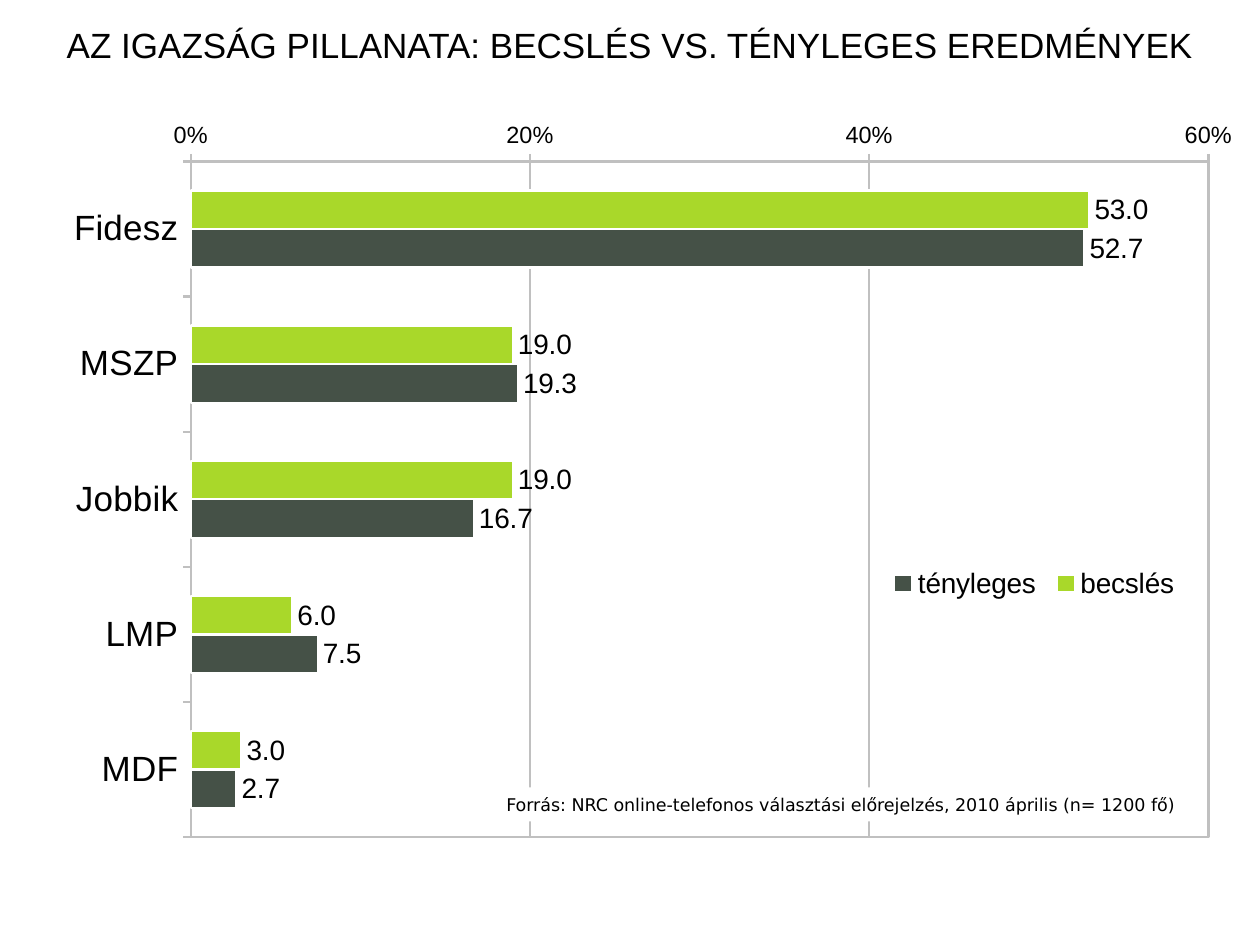
from dataclasses import dataclass

from lxml import etree
from pptx import Presentation
from pptx.chart.data import CategoryChartData
from pptx.dml.color import RGBColor
from pptx.enum.chart import XL_CHART_TYPE, XL_LABEL_POSITION, XL_LEGEND_POSITION, XL_TICK_MARK
from pptx.enum.text import MSO_ANCHOR, MSO_AUTO_SIZE, PP_ALIGN
from pptx.oxml import parse_xml
from pptx.oxml.ns import nsdecls, qn
from pptx.util import Inches, Pt

BAR_CLUSTERED = XL_CHART_TYPE.BAR_CLUSTERED
LABEL_OUTSIDE = XL_LABEL_POSITION.OUTSIDE_END
LEGEND_RIGHT = XL_LEGEND_POSITION.RIGHT
TICK_OUTSIDE = XL_TICK_MARK.OUTSIDE
TICK_NONE = XL_TICK_MARK.NONE
MIDDLE = MSO_ANCHOR.MIDDLE
CENTER = PP_ALIGN.CENTER
GROW_SHAPE = MSO_AUTO_SIZE.SHAPE_TO_FIT_TEXT


@dataclass(frozen=True)
class Theme:
    text: str = "000000"
    paper: str = "FFFFFF"
    grid: str = "C0C0C0"
    estimate: str = "A9D82A"
    actual: str = "455147"
    font: str = "Arial"
    source_font: str = "DejaVu Sans"
    title_size: float = 20
    category_size: float = 20
    label_size: float = 16
    scale_size: float = 13.4
    source_size: float = 10
    line_width: float = 1.34


THEME = Theme()
PARTIES = ["Fidesz", "MSZP", "Jobbik", "LMP", "MDF"]
RESULTS = [
    ("becslés", THEME.estimate, [53, 19, 19, 6, 3]),
    ("tényleges", THEME.actual, [52.7, 19.3, 16.7, 7.5, 2.7]),
]


def style_font(font, size, name=THEME.font):
    font.name = name
    font.size = Pt(size)
    font.bold = False
    font.color.rgb = RGBColor.from_string(THEME.text)


def style_line(line, color):
    line.width = Pt(THEME.line_width)
    line.color.rgb = RGBColor.from_string(color)


def place(shape, left, top, width, height):
    shape.left, shape.top = Inches(left), Inches(top)
    shape.width, shape.height = Inches(width), Inches(height)


def set_layout(parent, index, x, y, width, height, inner=False):
    """Give a plot area or legend a fixed place, in fractions of the chart."""
    for old in parent.findall(qn("c:layout")):
        parent.remove(old)
    layout = etree.Element(qn("c:layout"))
    manual = etree.SubElement(layout, qn("c:manualLayout"))
    values = [("xMode", "edge"), ("yMode", "edge"),
              ("x", x), ("y", y), ("w", width), ("h", height)]
    if inner:
        values.insert(0, ("layoutTarget", "inner"))
    for tag, value in values:
        etree.SubElement(manual, qn(f"c:{tag}")).set("val", str(value))
    parent.insert(index, layout)


def add_title(slide, text):
    title = slide.shapes.title
    place(title, -0.25, 0.05, 10.5, 0.61)
    title.text_frame.vertical_anchor = MIDDLE
    paragraph = title.text_frame.paragraphs[0]
    paragraph.alignment = CENTER
    run = paragraph.add_run()
    run.text = text
    style_font(run.font, THEME.title_size)


def style_axis(axis, size):
    axis.major_tick_mark = TICK_OUTSIDE
    axis.minor_tick_mark = TICK_NONE
    style_font(axis.tick_labels.font, size)
    style_line(axis.format.line, THEME.grid)


def style_series(series, color):
    series.format.fill.solid()
    series.format.fill.fore_color.rgb = RGBColor.from_string(color)
    style_line(series.format.line, THEME.paper)
    series.invert_if_negative = False
    labels = series.data_labels
    labels.show_value = True
    labels.number_format = "0.0"
    labels.number_format_is_linked = False
    labels.position = LABEL_OUTSIDE
    style_font(labels.font, THEME.label_size)


def add_legend(chart):
    chart.has_legend = True
    legend = chart.legend
    legend.position = LEGEND_RIGHT
    legend.include_in_layout = False
    style_font(legend.font, THEME.label_size)
    set_layout(chart._chartSpace.chart.find(qn("c:legend")), 1, 0.7, 0.61, 0.25, 0.06)


def add_results_chart(slide):
    data = CategoryChartData()
    data.categories = PARTIES
    for name, _, values in RESULTS:
        data.add_series(name, values)
    chart = slide.shapes.add_chart(
        BAR_CLUSTERED, Inches(0.25), Inches(0.83), Inches(9.65), Inches(5.94), data).chart
    chart.has_title = False
    style_font(chart.font, THEME.label_size)

    # Bars
    plot = chart.plots[0]
    plot.gap_width = 150
    plot.overlap = 0
    plot.vary_by_categories = False
    for series, (_, color, _) in zip(plot.series, RESULTS):
        style_series(series, color)

    # Axes: the first party on top, the scale along the upper edge
    style_axis(chart.category_axis, THEME.category_size)
    chart.category_axis.reverse_order = True
    scale = chart.value_axis
    style_axis(scale, THEME.scale_size)
    scale.minimum_scale, scale.maximum_scale, scale.major_unit = 0, 60, 20
    scale.tick_labels.number_format = "0\\%"
    scale.tick_labels.number_format_is_linked = False
    scale.has_major_gridlines = True
    style_line(scale.major_gridlines.format.line, THEME.grid)

    # Plot frame and legend
    plot_area = chart._chartSpace.chart.plotArea
    set_layout(plot_area, 0, 0.131, 0.076, 0.837, 0.903, inner=True)
    plot_area.append(parse_xml(
        f'<c:spPr {nsdecls("c", "a")}><a:noFill/><a:ln w="{Pt(THEME.line_width)}">'
        f'<a:solidFill><a:srgbClr val="{THEME.grid}"/></a:solidFill></a:ln></c:spPr>'))
    add_legend(chart)


def add_source(slide, text):
    box = slide.shapes.add_textbox(Inches(3.92), Inches(6.25), Inches(5.63), Inches(0.27))
    box.fill.solid()
    box.fill.fore_color.rgb = RGBColor.from_string(THEME.paper)
    box.text_frame.word_wrap = False
    box.text_frame.auto_size = GROW_SHAPE
    run = box.text_frame.paragraphs[0].add_run()
    run.text = text
    style_font(run.font, THEME.source_size, THEME.source_font)


def main():
    presentation = Presentation()
    presentation.slide_width = Inches(10)
    presentation.slide_height = Inches(7.5)
    slide = presentation.slides.add_slide(presentation.slide_layouts[5])
    add_results_chart(slide)
    add_title(slide, "AZ IGAZSÁG PILLANATA: BECSLÉS VS. TÉNYLEGES EREDMÉNYEK")
    add_source(slide, "Forrás: NRC online-telefonos választási előrejelzés, "
                      "2010 április (n= 1200 fő)")
    presentation.save("out.pptx")


if __name__ == "__main__":
    main()
